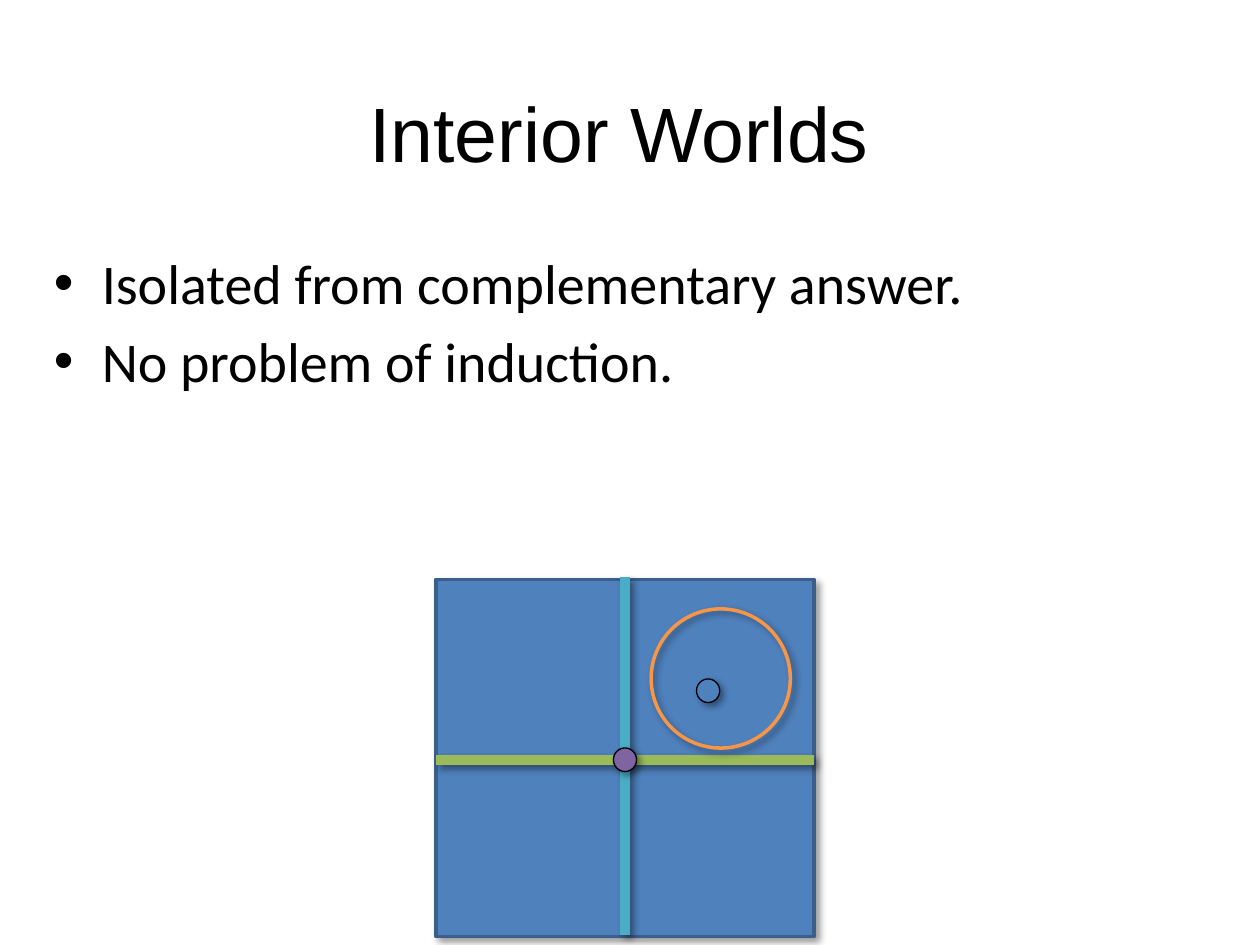
import pptx
import pptx.dml.color
import pptx.enum.shapes
import pptx.enum.text
import pptx.oxml
import pptx.oxml.ns
import pptx.util

RGBColor = pptx.dml.color.RGBColor
BLACK = RGBColor(0x00, 0x00, 0x00)
BLUE = RGBColor(0x4F, 0x81, 0xBD)
DARK_BLUE = RGBColor(0x3A, 0x5F, 0x8C)
GREEN = RGBColor(0x9B, 0xBB, 0x59)
TEAL = RGBColor(0x4B, 0xAC, 0xC6)
ORANGE = RGBColor(0xF7, 0x96, 0x46)
PURPLE = RGBColor(0x80, 0x64, 0xA2)

RECTANGLE = pptx.enum.shapes.MSO_SHAPE.RECTANGLE
OVAL = pptx.enum.shapes.MSO_SHAPE.OVAL

COLUMNS = 100
ROWS = 100


class SlideBuilder:
    title_font = "Arial"
    title_size = 44
    body_font = "Calibri"
    body_size = 32
    indent = pptx.util.Inches(0.38)

    def __init__(self, presentation):
        self.column = presentation.slide_width / COLUMNS
        self.row = presentation.slide_height / ROWS
        self.slide = presentation.slides.add_slide(presentation.slide_layouts[6])

    def place(self, x, y):
        return round(x * self.column), round(y * self.row)

    def add_frame(self, left, top, width, height):
        box = self.slide.shapes.add_textbox(*self.place(left, top), *self.place(width, height))
        box.text_frame.word_wrap = True
        return box.text_frame

    def add_run(self, paragraph, text, font, size):
        run = paragraph.add_run()
        run.text = text
        run.font.name = font
        run.font.size = pptx.util.Pt(size)
        run.font.color.rgb = BLACK

    def add_title(self, text, *bounds):
        frame = self.add_frame(*bounds)
        frame.vertical_anchor = pptx.enum.text.MSO_ANCHOR.MIDDLE
        paragraph = frame.paragraphs[0]
        paragraph.alignment = pptx.enum.text.PP_ALIGN.CENTER
        self.add_run(paragraph, text, self.title_font, self.title_size)

    def add_bullets(self, texts, *bounds):
        frame = self.add_frame(*bounds)
        for index, text in enumerate(texts):
            paragraph = frame.add_paragraph() if index else frame.paragraphs[0]
            paragraph.space_before = pptx.util.Pt(self.body_size * 0.2)
            properties = paragraph._p.get_or_add_pPr()
            properties.set("marL", str(self.indent))
            properties.set("indent", str(-self.indent))
            namespace = pptx.oxml.ns.nsdecls("a")
            for markup in (f'<a:buFont {namespace} typeface="Arial"/>', f'<a:buChar {namespace} char="•"/>'):
                properties.append(pptx.oxml.parse_xml(markup))
            self.add_run(paragraph, text, self.body_font, self.body_size)

    def set_outline(self, shape, color, weight):
        shape.line.color.rgb = color
        shape.line.width = pptx.util.Pt(weight)
        shape._element.spPr.append(pptx.oxml.parse_xml(
            f'<a:effectLst {pptx.oxml.ns.nsdecls("a")}>'
            f'<a:outerShdw blurRad="{pptx.util.Pt(4)}" dist="{pptx.util.Pt(3)}" dir="2700000" rotWithShape="0">'
            '<a:srgbClr val="000000"><a:alpha val="40000"/></a:srgbClr>'
            '</a:outerShdw></a:effectLst>'))

    def add_shape(self, kind, center, size, fill, line, weight):
        left, top = (middle - length / 2 for middle, length in zip(center, size))
        shape = self.slide.shapes.add_shape(kind, *self.place(left, top), *self.place(*size))
        if fill is None:
            shape.fill.background()
        else:
            shape.fill.solid()
            shape.fill.fore_color.rgb = fill
        self.set_outline(shape, line, weight)

    def add_line(self, start, end, color, weight):
        connector = self.slide.shapes.add_connector(
            pptx.enum.shapes.MSO_CONNECTOR.STRAIGHT, *self.place(*start), *self.place(*end))
        self.set_outline(connector, color, weight)


def main():
    presentation = pptx.Presentation()
    presentation.slide_width = pptx.util.Inches(10)
    presentation.slide_height = pptx.util.Inches(7.5)
    builder = SlideBuilder(presentation)

    builder.add_title("Interior Worlds", 5, 5.6, 88.3, 16.67)
    builder.add_bullets(
        ["Isolated from complementary answer.", "No problem of induction."],
        3.3, 25.6, 95, 34.4)

    center_x, center_y = 49.6, 80.4
    square_width, square_height = 30, 37.8
    point_size = (1.84, 2.5)
    builder.add_shape(RECTANGLE, (center_x, 80.2), (square_width, square_height), BLUE, DARK_BLUE, 2)
    builder.add_line((center_x - square_width / 2, center_y),
                     (center_x + square_width / 2, center_y), GREEN, 6)
    builder.add_line((center_x, 98.9), (center_x, 61.1), TEAL, 6)
    builder.add_shape(OVAL, (57.2, 71.8), (11.05, 14.73), None, ORANGE, 2)
    builder.add_shape(OVAL, (center_x, center_y), point_size, PURPLE, BLACK, 0.75)
    builder.add_shape(OVAL, (56.2, 73.1), point_size, BLUE, BLACK, 0.75)

    presentation.save("out.pptx")


if __name__ == "__main__":
    main()
